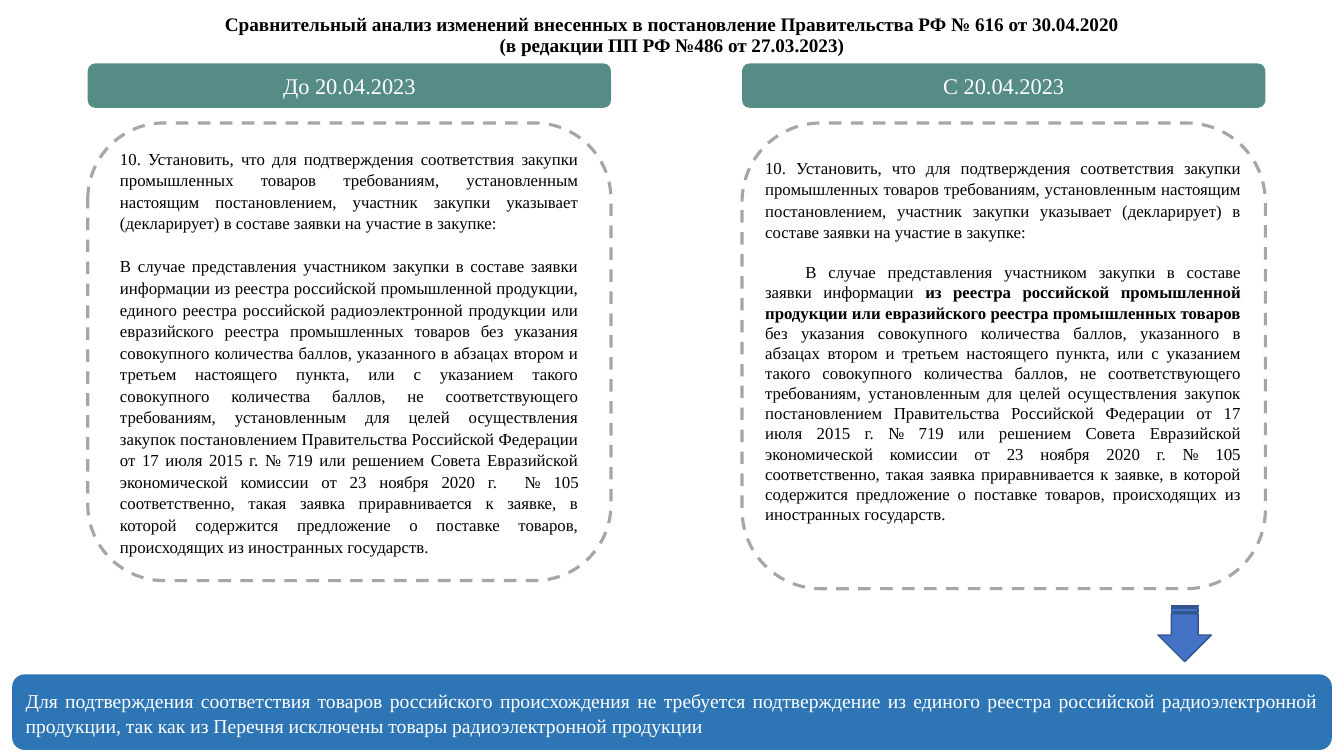
from pptx import Presentation
from pptx.dml.color import RGBColor
from pptx.enum.dml import MSO_LINE
from pptx.enum.shapes import MSO_SHAPE
from pptx.enum.text import MSO_ANCHOR, MSO_AUTO_SIZE, PP_ALIGN
from pptx.util import Inches, Pt

COLORS = {
    "text": "000000",
    "light": "FFFFFF",
    "header": "568C86",
    "conclusion": "2E75B6",
    "dash": "A6A6A6",
    "arrow": "4472C4",
    "arrow_edge": "325491",
}
FONT = "Times New Roman"
COLUMN_LEFTS = (0.87, 7.36)
COLUMN_WIDTH = 5.19
PANEL_TOP = 1.22

TITLE = (
    "Сравнительный анализ изменений внесенных в постановление Правительства РФ № 616 от 30.04.2020",
    "(в редакции ПП РФ №486 от 27.03.2023)",
)
CLAUSE = (
    "10. Установить, что для подтверждения соответствия закупки промышленных товаров "
    "требованиям, установленным настоящим постановлением, участник закупки указывает "
    "(декларирует) в составе заявки на участие в закупке:"
)
CASE_START = "В случае представления участником закупки в составе заявки информации "
REGISTERS_BEFORE = (
    "из реестра российской промышленной продукции, единого реестра российской "
    "радиоэлектронной продукции или евразийского реестра промышленных товаров"
)
REGISTERS_AFTER = (
    "из реестра российской промышленной продукции или евразийского реестра промышленных товаров"
)
CASE_MIDDLE = (
    " без указания совокупного количества баллов, указанного в абзацах втором и третьем "
    "настоящего пункта, или с указанием такого совокупного количества баллов, не "
    "соответствующего требованиям, установленным для целей осуществления закупок "
    "постановлением Правительства Российской Федерации от 17 июля 2015 г. № 719 или "
    "решением Совета Евразийской экономической комиссии от 23 ноября 2020 г."
)
CASE_END = (
    "№ 105 соответственно, такая заявка приравнивается к заявке, в которой содержится "
    "предложение о поставке товаров, происходящих из иностранных государств."
)
CONCLUSION = (
    "Для подтверждения соответствия товаров российского происхождения не требуется "
    "подтверждение из единого реестра российской радиоэлектронной продукции, так как из "
    "Перечня исключены товары радиоэлектронной продукции"
)


def rgb(name):
    """Return the named colour."""
    return RGBColor.from_string(COLORS[name])


def add_block(slide, kind, box, fill=None, line=None, line_width=1):
    """Add a preset shape with optional fill and outline."""
    block = slide.shapes.add_shape(kind, *map(Inches, box))
    block.shadow.inherit = False
    if fill:
        block.fill.solid()
        block.fill.fore_color.rgb = rgb(fill)
    else:
        block.fill.background()
    if line:
        block.line.color.rgb = rgb(line)
        block.line.width = Pt(line_width)
    else:
        block.line.fill.background()
    return block


def add_panel(slide, left, height, rounding):
    """Add a dashed rounded panel for one version of the clause."""
    panel = add_block(slide, MSO_SHAPE.ROUNDED_RECTANGLE,
                      (left, PANEL_TOP, COLUMN_WIDTH, height), line="dash", line_width=2.25)
    panel.line.dash_style = MSO_LINE.DASH
    panel.adjustments[0] = rounding
    return panel


def add_text_area(slide, box):
    """Add a text box and return its frame."""
    return slide.shapes.add_textbox(*map(Inches, box)).text_frame


def write(frame, paragraphs, size, color="text", align=PP_ALIGN.JUSTIFY, spacing=1.07,
          bold=False, anchor=MSO_ANCHOR.MIDDLE):
    """Fill a frame with paragraphs of uniform style."""
    frame.word_wrap = True
    frame.vertical_anchor = anchor
    for index, words in enumerate(paragraphs):
        paragraph = frame.paragraphs[0] if index == 0 else frame.add_paragraph()
        paragraph.alignment = align
        paragraph.line_spacing = spacing
        font = paragraph.font
        font.name, font.size, font.bold = FONT, Pt(size), bold
        font.color.rgb = rgb(color)
        for part in words if isinstance(words, tuple) else (words,):
            paragraph.add_run().text = part


def add_bar(slide, box, words, fill, size, **style):
    """Add a filled rounded bar with light text."""
    bar = add_block(slide, MSO_SHAPE.ROUNDED_RECTANGLE, box, fill)
    write(bar.text_frame, [words], size, "light", **style)


def add_new_version(slide):
    """Add the text of the clause in force after the change."""
    frame = add_text_area(slide, (7.49, 1.5, 4.92, 3.94))
    case = (CASE_START, REGISTERS_AFTER, CASE_MIDDLE + " " + CASE_END)
    write(frame, [CLAUSE, case], 12, anchor=MSO_ANCHOR.TOP)
    frame.auto_size = MSO_AUTO_SIZE.SHAPE_TO_FIT_TEXT
    case_paragraph = frame.paragraphs[1]
    case_paragraph.line_spacing = 1.0
    case_paragraph.space_before = Pt(14)
    case_paragraph._p.get_or_add_pPr().set("indent", str(Inches(0.4)))
    case_paragraph.runs[1].font.bold = True


def main():
    """Build the comparison slide."""
    deck = Presentation()
    deck.slide_width, deck.slide_height = Inches(13.33), Inches(7.5)
    slide = deck.slides.add_slide(deck.slide_layouts[6])

    old_panel = add_panel(slide, COLUMN_LEFTS[0], 4.54, 0.1667)
    old_case = CASE_START + REGISTERS_BEFORE + CASE_MIDDLE + "\t" + CASE_END
    write(old_panel.text_frame, [CLAUSE, old_case], 12)
    old_panel.text_frame.paragraphs[1].space_before = Pt(15.4)
    add_panel(slide, COLUMN_LEFTS[1], 4.62, 0.169)

    for left, period in zip(COLUMN_LEFTS, ("До 20.04.2023", "С 20.04.2023")):
        add_bar(slide, (left, 0.63, COLUMN_WIDTH, 0.44), period, "header", 16,
                align=PP_ALIGN.CENTER, spacing=1.0)
    add_bar(slide, (0.12, 6.69, 13.09, 0.75), CONCLUSION, "conclusion", 14)

    arrow = add_block(slide, MSO_SHAPE.STRIPED_RIGHT_ARROW, (11.47, 6.02, 0.56, 0.53),
                      "arrow", "arrow_edge")
    arrow.rotation = 90

    write(add_text_area(slide, (0.33, 0, 12.67, 0.61)), TITLE_LINES, 13.7,
          align=PP_ALIGN.CENTER, spacing=0.9, bold=True, anchor=MSO_ANCHOR.BOTTOM)
    add_new_version(slide)
    deck.save("out.pptx")


TITLE_LINES = list(TITLE)

if __name__ == "__main__":
    main()
